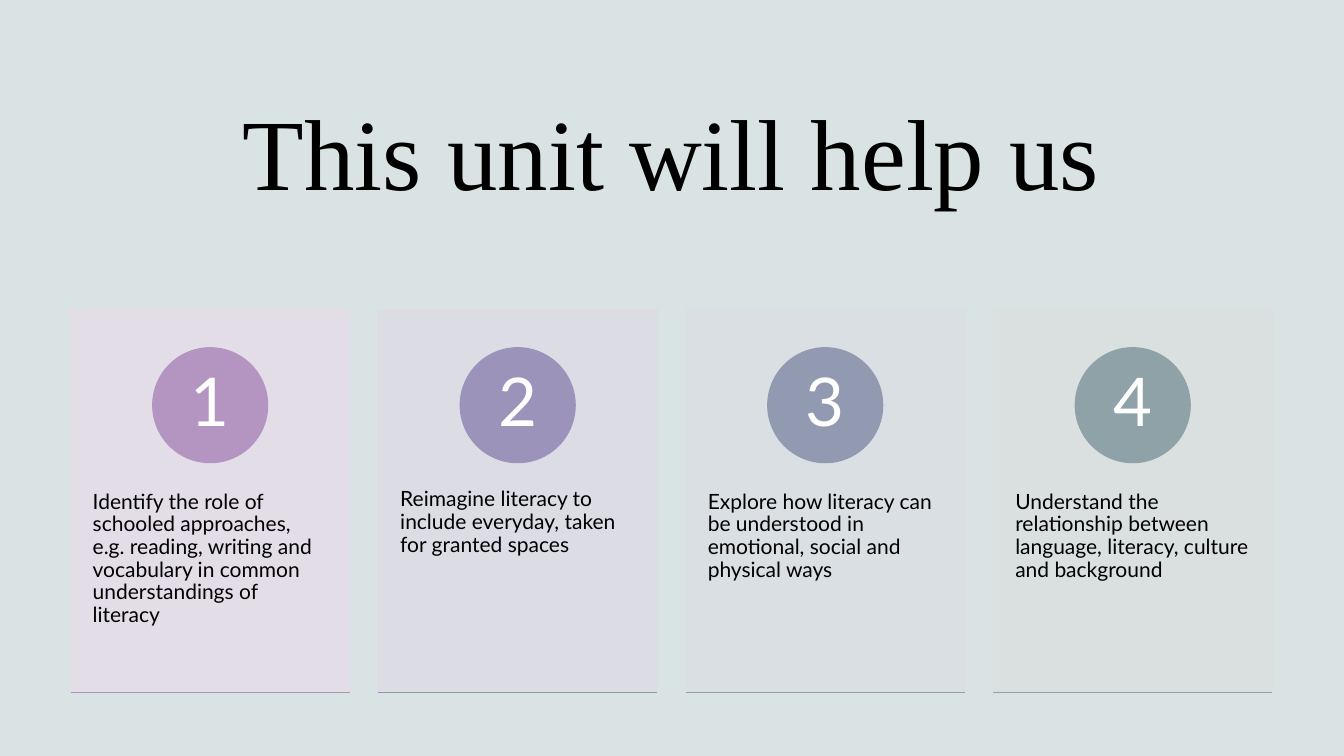
"""Build a slide with four numbered cards on the aims of a literacy unit."""
from pptx import Presentation
from pptx.dml.color import RGBColor
from pptx.enum import shapes, text
from pptx.oxml import ns, xmlchemy
from pptx.util import Inches, Pt

TITLE = "This unit will help us"
AIMS = [
    "Identify the role of schooled approaches, e.g. reading, writing and "
    "vocabulary in common understandings of literacy",
    "Reimagine literacy to include everyday, taken for granted spaces",
    "Explore how literacy can be understood in emotional, social and physical ways",
    "Understand the relationship between language, literacy, culture and background",
]
CARD_COLORS = [RGBColor(0xE5, 0xDD, 0xE9), RGBColor(0xDD, 0xDC, 0xE6),
               RGBColor(0xDB, 0xDF, 0xE3), RGBColor(0xDB, 0xE0, 0xE0)]
CIRCLE_COLORS = [RGBColor(0xB4, 0x95, 0xC2), RGBColor(0x9B, 0x93, 0xBA),
                 RGBColor(0x91, 0x9A, 0xB1), RGBColor(0x8F, 0xA2, 0xA8)]
RULE_COLORS = [RGBColor(0xA7, 0x94, 0xBE), RGBColor(0x92, 0x93, 0xB5),
               RGBColor(0x90, 0x9F, 0xAD), RGBColor(0x8F, 0xA3, 0xA3)]
BACKGROUND = RGBColor(0xDA, 0xE3, 0xE3)
BLACK = RGBColor(0, 0, 0)
WHITE = RGBColor(0xFF, 0xFF, 0xFF)

LEFT, PITCH = 0.7, 3.05
CARD_TOP, CARD_WIDTH, CARD_HEIGHT = 3.07, 2.77, 3.8
CIRCLE_TOP, CIRCLE_SIZE = 3.45, 1.14
AIM_TOP, AIM_HEIGHT = 4.51, 2.28
LINE_WIDTH = Pt(0.85)


def write(shape, words, size, font, color, align, anchor, insets, spacing=1.0):
    frame = shape.text_frame
    frame.word_wrap = True
    frame.vertical_anchor = anchor
    (frame.margin_left, frame.margin_top,
     frame.margin_right, frame.margin_bottom) = map(Inches, insets)
    para = frame.paragraphs[0]
    para.alignment = align
    para.line_spacing = spacing
    span = para.add_run()
    span.text = words
    span.font.size = Pt(size)
    span.font.name = font
    span.font.color.rgb = color


def add_filled(page, kind, left, top, width, height, color, opacity=100):
    shape = page.shapes.add_shape(
        kind, Inches(left), Inches(top), Inches(width), Inches(height))
    shape.shadow.inherit = False
    shape.fill.solid()
    shape.fill.fore_color.rgb = color
    shape.line.color.rgb = color
    shape.line.width = LINE_WIDTH
    if opacity < 100:
        for tint in shape.fill._xPr.iter(ns.qn("a:srgbClr")):
            alpha = xmlchemy.OxmlElement("a:alpha")
            alpha.set("val", str(opacity * 1000))
            tint.append(alpha)
    return shape


def add_text_box(page, left, top, width, height):
    return page.shapes.add_textbox(
        Inches(left), Inches(top), Inches(width), Inches(height))


def add_rule(page, left, top, width, color):
    rule = page.shapes.add_connector(
        shapes.MSO_CONNECTOR.STRAIGHT,
        Inches(left), Inches(top), Inches(left + width), Inches(top))
    rule.line.color.rgb = color
    rule.line.width = LINE_WIDTH
    rule._element.spPr.append(xmlchemy.OxmlElement("a:effectLst"))


def add_card(page, index):
    left = LEFT + index * PITCH
    add_filled(page, shapes.MSO_SHAPE.RECTANGLE, left, CARD_TOP,
               CARD_WIDTH, CARD_HEIGHT, CARD_COLORS[index], opacity=90)
    aim = add_text_box(page, left, AIM_TOP, CARD_WIDTH, AIM_HEIGHT)
    write(aim, AIMS[index], 15, "Lato", BLACK, text.PP_ALIGN.LEFT,
          text.MSO_ANCHOR.TOP, (0.22, 0.36, 0.22, 0.36), 0.9)
    circle = add_filled(page, shapes.MSO_SHAPE.OVAL,
                        left + (CARD_WIDTH - CIRCLE_SIZE) / 2, CIRCLE_TOP,
                        CIRCLE_SIZE, CIRCLE_SIZE, CIRCLE_COLORS[index])
    write(circle, str(index + 1), 48, "Lato", WHITE, text.PP_ALIGN.CENTER,
          text.MSO_ANCHOR.MIDDLE, (0.09, 0.01, 0.09, 0.01), 0.9)
    add_rule(page, left, CARD_TOP + CARD_HEIGHT, CARD_WIDTH, RULE_COLORS[index])


def main():
    deck = Presentation()
    deck.slide_width, deck.slide_height = Inches(13.33), Inches(7.5)
    page = deck.slides.add_slide(deck.slide_layouts[6])
    page.background.fill.solid()
    page.background.fill.fore_color.rgb = BACKGROUND
    title = add_text_box(page, 0.69, 0.69, 11.94, 1.44)
    write(title, TITLE, 72, "Times New Roman", BLACK, text.PP_ALIGN.CENTER,
          text.MSO_ANCHOR.MIDDLE, (0.1, 0.2, 0.1, 0.05))
    for index in range(len(AIMS)):
        add_card(page, index)
    deck.save("out.pptx")


if __name__ == "__main__":
    main()
